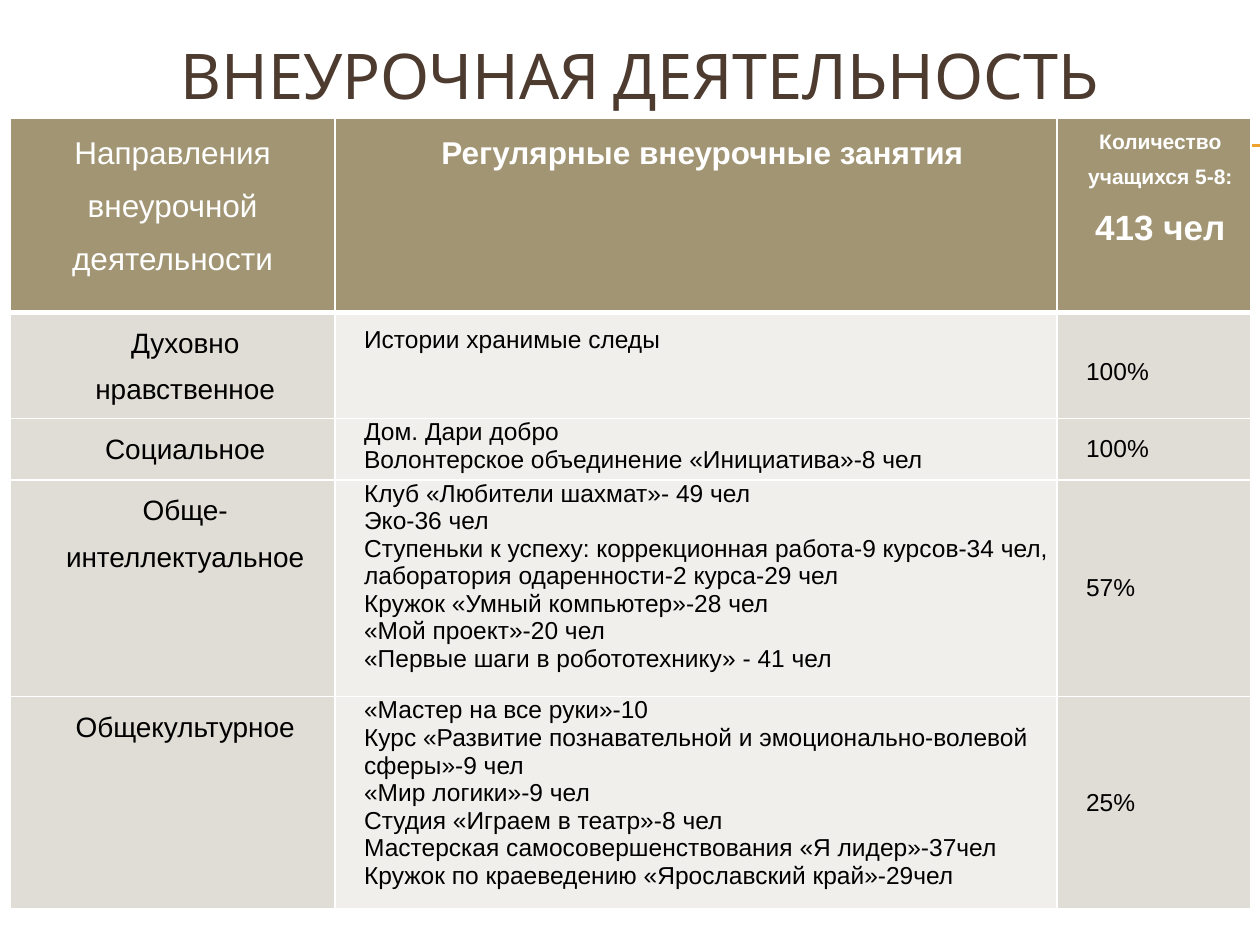
from lxml.etree import SubElement
from pptx import Presentation
from pptx.dml.color import RGBColor
from pptx.enum.shapes import MSO_CONNECTOR
from pptx.enum.text import MSO_ANCHOR, PP_ALIGN
from pptx.oxml.ns import qn
from pptx.util import Inches, Pt

COLUMN_WIDTHS = [2.58, 5.73, 1.54]
ROW_HEIGHTS = [1.54, 0.84, 0.49, 1.72, 1.68]
HEADERS = [
    ([("Направления внеурочной деятельности", 18)], False, 0),
    ([("Регулярные внеурочные занятия", 18)], True, 0.1),
    ([("Количество учащихся 5-8: ", 12), ("413 чел", 20)], True, 0.1),
]
DIRECTIONS = [
    ("Духовно нравственное", ["Истории хранимые следы"], "100%", 1.5),
    ("Социальное", ["Дом. Дари добро", "Волонтерское объединение «Инициатива»-8 чел"], "100%", 1),
    ("Обще-интеллектуальное", [
        "Клуб «Любители шахмат»- 49 чел",
        "Эко-36 чел",
        "Ступеньки к успеху: коррекционная работа-9 курсов-34 чел, "
        "лаборатория одаренности-2 курса-29 чел",
        "Кружок «Умный компьютер»-28 чел",
        "«Мой проект»-20 чел",
        "«Первые шаги в робототехнику» - 41 чел",
    ], "57%", 1),
    ("Общекультурное", [
        "«Мастер на все руки»-10",
        "Курс «Развитие познавательной и эмоционально-волевой сферы»-9 чел",
        "«Мир логики»-9 чел",
        "Студия «Играем в театр»-8 чел",
        "Мастерская самосовершенствования «Я лидер»-37чел",
        "Кружок по краеведению «Ярославский край»-29чел",
    ], "25%", 1),
]


def rgb(color):
    """Turn a hex string into a colour."""
    return RGBColor.from_string(color)


def add_run(paragraph, text, size, color, font="Arial", bold=False):
    """Append a formatted run to a paragraph."""
    run = paragraph.add_run()
    run.text = text
    run.font.name = font
    run.font.size = Pt(size)
    run.font.bold = bold
    run.font.color.rgb = rgb(color)


def add_rule(slide, y):
    """Draw a thin accent line running to the right edge."""
    rule = slide.shapes.add_connector(
        MSO_CONNECTOR.STRAIGHT, Inches(0.56), Inches(y), Inches(10), Inches(y))
    rule.line.color.rgb = rgb("F0A22E")
    rule.line.width = Pt(0.75)
    SubElement(rule._element.spPr, qn("a:effectLst"))


def add_title(slide, text):
    """Add the centred slide title."""
    title = slide.shapes.add_textbox(Inches(0.33), Inches(0.16), Inches(9.5), Inches(0.86))
    frame = title.text_frame
    frame.word_wrap = True
    frame.vertical_anchor = MSO_ANCHOR.MIDDLE
    paragraph = frame.paragraphs[0]
    paragraph.alignment = PP_ALIGN.CENTER
    add_run(paragraph, text, 36, "4E3B30", font="Cabin")


def set_borders(cell, bottom_width):
    """Give a cell white borders and a bottom border of its own width."""
    properties = cell._tc.get_or_add_tcPr()
    widths = {"a:lnL": 1, "a:lnR": 1, "a:lnT": 1, "a:lnB": bottom_width}
    for position, (tag, width) in enumerate(widths.items()):
        border = properties.makeelement(qn(tag), {"w": str(Pt(width))})
        fill = SubElement(border, qn("a:solidFill"))
        SubElement(fill, qn("a:srgbClr"), val="FFFFFF")
        properties.insert(position, border)


def fill_cell(cell, paragraphs, fill, color="000000", bold=False, indent=0.2,
              spacing=1, centered=False, middle=False, bottom_width=1):
    """Write paragraphs, each a list of (text, size) runs, into a styled cell."""
    cell.margin_left = cell.margin_right = Inches(0.03)
    cell.margin_top = cell.margin_bottom = 0
    cell.vertical_anchor = MSO_ANCHOR.MIDDLE if middle else MSO_ANCHOR.TOP
    cell.fill.solid()
    cell.fill.fore_color.rgb = rgb(fill)
    set_borders(cell, bottom_width)
    frame = cell.text_frame
    for number, runs in enumerate(paragraphs):
        paragraph = frame.add_paragraph() if number else frame.paragraphs[0]
        paragraph.alignment = PP_ALIGN.CENTER if centered else PP_ALIGN.LEFT
        paragraph.line_spacing = float(spacing)
        paragraph._p.get_or_add_pPr().set("marL", str(Inches(indent)))
        for text, size in runs:
            add_run(paragraph, text, size, color, bold=bold)


def add_activity_table(slide):
    """Add the table of directions, activities and attendance."""
    table = slide.shapes.add_table(
        len(ROW_HEIGHTS), len(COLUMN_WIDTHS), Inches(0.08), Inches(0.94),
        Inches(sum(COLUMN_WIDTHS)), Inches(sum(ROW_HEIGHTS))).table
    table.horz_banding = False
    for column, width in zip(table.columns, COLUMN_WIDTHS):
        column.width = Inches(width)
    for row, height in zip(table.rows, ROW_HEIGHTS):
        row.height = Inches(height)
    for column, (runs, bold, indent) in enumerate(HEADERS):
        fill_cell(table.cell(0, column), [runs], "A19574", "FFFFFF", bold, indent,
                  spacing=1.5, centered=True, bottom_width=3)
    for row, (direction, activities, share, spacing) in enumerate(DIRECTIONS, 1):
        fill_cell(table.cell(row, 0), [[(direction, 16)]], "E0DDD6",
                  spacing=1.5, centered=True)
        fill_cell(table.cell(row, 1), [[(activity, 14)] for activity in activities],
                  "F0EFEB", spacing=spacing)
        fill_cell(table.cell(row, 2), [[(share, 14)]], "E0DDD6",
                  spacing=spacing, middle=True)


def main():
    """Build and save the slide."""
    presentation = Presentation()
    presentation.slide_width = Inches(10)
    presentation.slide_height = Inches(7.5)
    slide = presentation.slides.add_slide(presentation.slide_layouts[6])
    for y in (1.15, 1.16):
        add_rule(slide, y)
    add_title(slide, "ВНЕУРОЧНАЯ ДЕЯТЕЛЬНОСТЬ")
    add_activity_table(slide)
    presentation.save("out.pptx")


if __name__ == "__main__":
    main()
